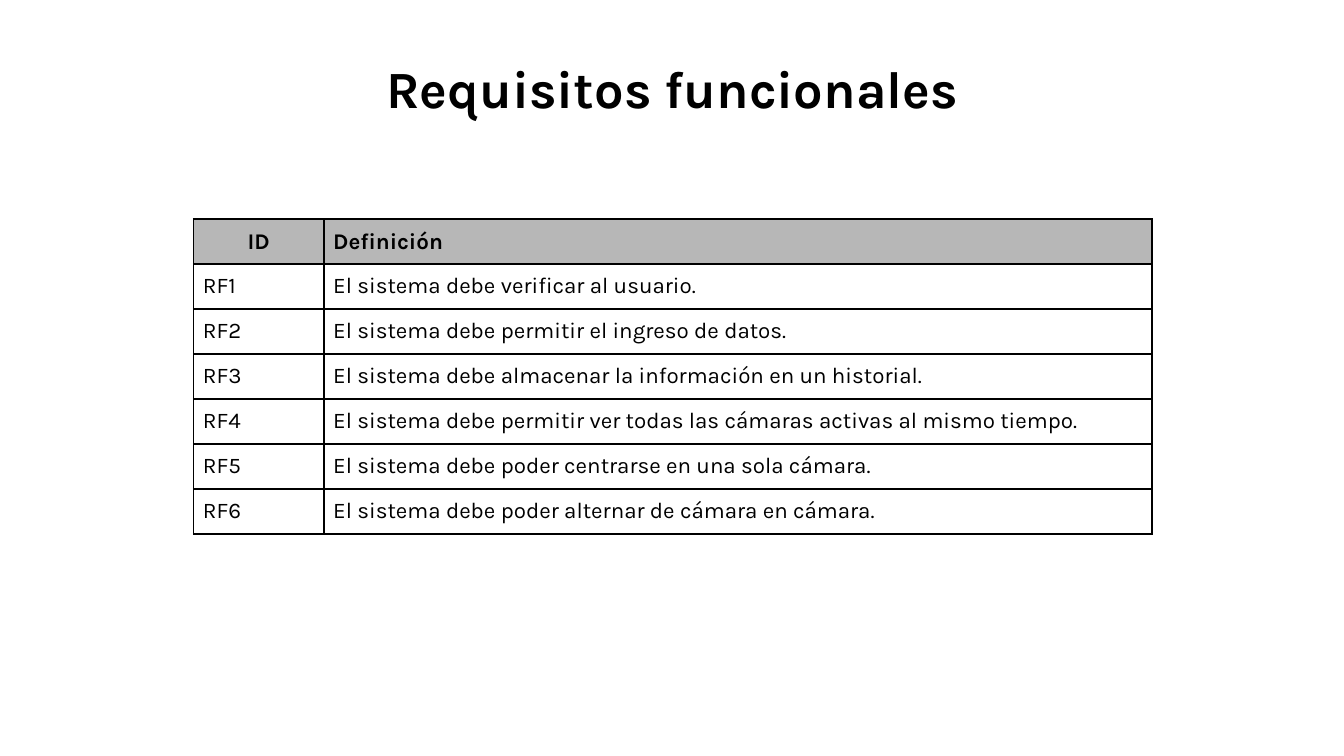
from lxml.etree import SubElement
from pptx import Presentation
from pptx.dml.color import RGBColor
from pptx.enum.text import MSO_ANCHOR as ANCHOR, PP_ALIGN as ALIGN
from pptx.oxml.ns import qn
from pptx.util import Inches, Pt

BLACK, GRAY = "000000", "B7B7B7"
TITLE_FONT = {"name": "Karla", "size": Pt(28), "bold": True}
HEAD_FONT = {"name": "Karla", "size": Pt(12), "bold": True}
BODY_FONT = {**HEAD_FONT, "bold": False}
SIDES = ("left", "right", "top", "bottom")

REQUIREMENTS = [
    "El sistema debe verificar al usuario.",
    "El sistema debe permitir el ingreso de datos.",
    "El sistema debe almacenar la información en un historial.",
    "El sistema debe permitir ver todas las cámaras activas al mismo tiempo.",
    "El sistema debe poder centrarse en una sola cámara.",
    "El sistema debe poder alternar de cámara en cámara.",
]


def color(value):
    return RGBColor.from_string(value)


def set_attrs(obj, values):
    for name, value in values.items():
        setattr(obj, name, value)


def write(tf, text, font, align):
    p = tf.paragraphs[0]
    p.alignment = align
    r = p.add_run()
    r.text = text
    set_attrs(r.font, font)
    r.font.color.rgb = color(BLACK)


def add_borders(cell):
    tc_pr = cell._tc.get_or_add_tcPr()
    for i, side in enumerate("LRTB"):
        ln = tc_pr.makeelement(qn(f"a:ln{side}"), {"w": str(Pt(1))})
        fill = SubElement(ln, qn("a:solidFill"))
        SubElement(fill, qn("a:srgbClr"), val=BLACK)
        tc_pr.insert(i, ln)


def fill_cell(cell, text, font, align, fill=None):
    set_attrs(cell, {f"margin_{side}": Inches(0.07) for side in SIDES})
    write(cell.text_frame, text, font, align)
    if fill:
        cell.fill.solid()
        cell.fill.fore_color.rgb = color(fill)
    else:
        cell.fill.background()
    add_borders(cell)


def place_title(s, left, top, width, height):
    sp = s.shapes.title
    box = {"left": left, "top": top, "width": width, "height": height}
    set_attrs(sp, {name: Inches(value) for name, value in box.items()})
    tf = sp.text_frame
    set_attrs(tf, {f"margin_{side}": Inches(0.1) for side in SIDES})
    set_attrs(tf, {"word_wrap": True, "vertical_anchor": ANCHOR.TOP})
    write(tf, "Requisitos funcionales", TITLE_FONT, ALIGN.CENTER)


def add_requirements(s, left, top, width, height):
    n_rows = len(REQUIREMENTS) + 1
    table = s.shapes.add_table(
        n_rows, 2, Inches(left), Inches(top), Inches(width), Inches(height)
    ).table
    id_width = 0.97
    for col, col_width in zip(table.columns, (id_width, width - id_width)):
        col.width = Inches(col_width)
    for row in table.rows:
        row.height = Inches(height / n_rows)

    fill_cell(table.cell(0, 0), "ID", HEAD_FONT, ALIGN.CENTER, GRAY)
    fill_cell(table.cell(0, 1), "Definición", HEAD_FONT, ALIGN.LEFT, GRAY)
    for i, text in enumerate(REQUIREMENTS, 1):
        fill_cell(table.cell(i, 0), f"RF{i}", BODY_FONT, ALIGN.LEFT)
        fill_cell(table.cell(i, 1), text, BODY_FONT, ALIGN.JUSTIFY)


def main():
    prs = Presentation()
    prs.slide_width = Inches(10)
    prs.slide_height = prs.slide_width * 9 // 16
    s = prs.slides.add_slide(prs.slide_layouts[5])
    place_title(s, 0.5, 0.32, 9, 0.63)
    add_requirements(s, 1.44, 1.63, 7.13, 2.33)
    prs.save("out.pptx")


if __name__ == "__main__":
    main()
